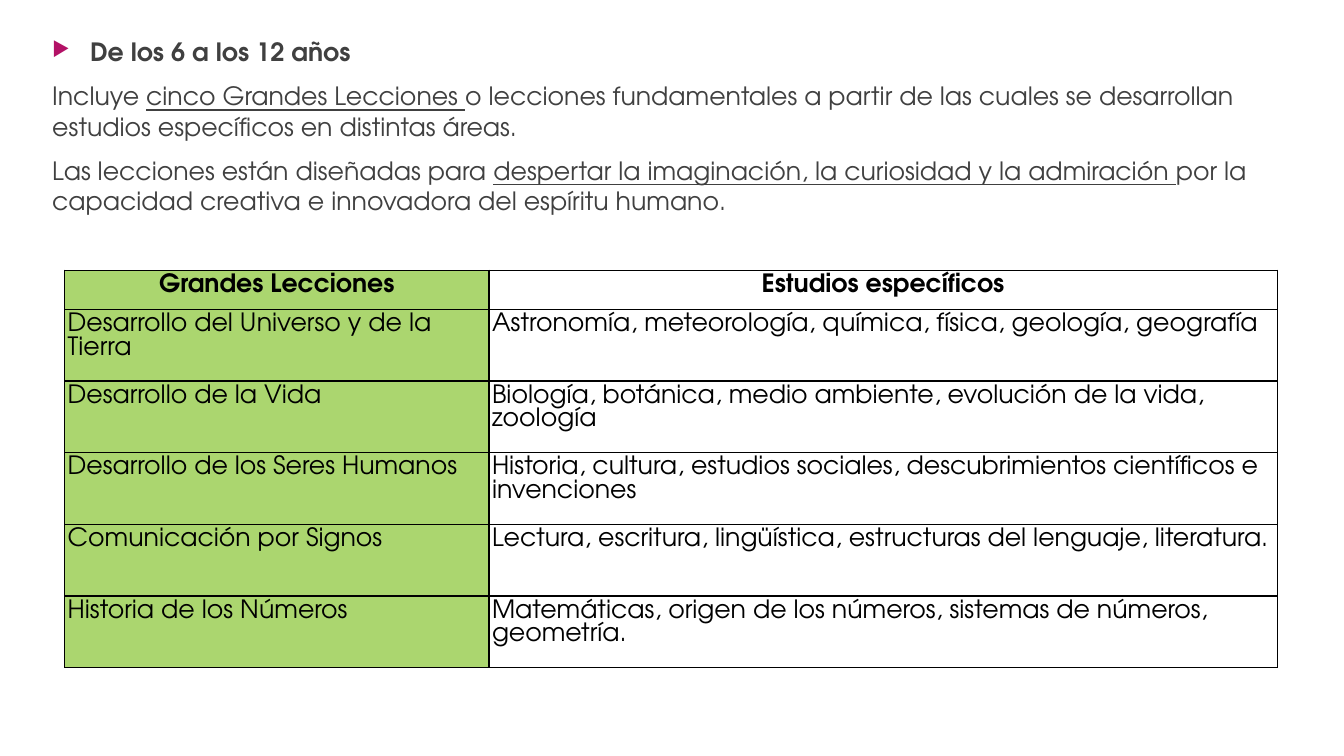
from lxml.etree import SubElement
from pptx import Presentation
from pptx.dml.color import RGBColor
from pptx.enum.text import PP_ALIGN
from pptx.oxml.ns import qn
from pptx.util import Pt

COLORS = {"body": "404040", "ink": "000000", "bullet": "B31166",
          "lesson": "ABD66F", "study": "FFFFFF"}

INTRO = [
    [("De los 6 a los 12 años", {"bold": True})],
    [("Incluye ", {}),
     ("cinco Grandes Lecciones ", {"underline": True}),
     ("o lecciones fundamentales a partir de las cuales se desarrollan "
      "estudios específicos en distintas áreas.", {})],
    [("Las lecciones están diseñadas para ", {}),
     ("despertar la imaginación, la curiosidad y la admiración ", {"underline": True}),
     ("por la capacidad creativa e innovadora del espíritu humano.", {})],
]

LESSONS = [
    ("Grandes Lecciones", "Estudios específicos"),
    ("Desarrollo del Universo y de la Tierra",
     "Astronomía, meteorología, química, física, geología, geografía"),
    ("Desarrollo de la Vida",
     "Biología, botánica, medio ambiente, evolución de la vida, zoología"),
    ("Desarrollo de los Seres Humanos",
     "Historia, cultura, estudios sociales, descubrimientos científicos e invenciones"),
    ("Comunicación por Signos",
     "Lectura, escritura, lingüística, estructuras del lenguaje, literatura."),
    ("Historia de los Números",
     "Matemáticas, origen de los números, sistemas de números, geometría."),
]


class LessonPage:
    """Hold the text style and the current slide, and add elements to it."""

    def __init__(self, page):
        self.page = page
        self.font = {"name": "TeX Gyre Adventor", "size": Pt(18)}

    def span(self, para, text, color, **values):
        run = para.add_run()
        run.text = text
        for name, value in {**self.font, **values}.items():
            setattr(run.font, name, value)
        run.font.color.rgb = RGBColor.from_string(COLORS[color])

    def bullet(self, para, indent):
        properties = para._p.get_or_add_pPr()
        properties.set("marL", str(Pt(indent)))
        properties.set("indent", str(-Pt(indent)))
        color = SubElement(properties, qn("a:buClr"))
        SubElement(color, qn("a:srgbClr"), val=COLORS["bullet"])
        SubElement(properties, qn("a:buSzPct"), val="80000")
        SubElement(properties, qn("a:buChar"), char="▶")

    def text(self, left, top, width, height, paragraphs):
        box = self.page.shapes.add_textbox(Pt(left), Pt(top), Pt(width), Pt(height))
        frame = box.text_frame
        frame.word_wrap = True
        for index, spans in enumerate(paragraphs):
            para = frame.add_paragraph() if index else frame.paragraphs[0]
            if index:
                para.space_before = Pt(10)
            else:
                self.bullet(para, 27)
            for text, values in spans:
                self.span(para, text, "body", **values)

    def borders(self, cell):
        properties = cell._tc.get_or_add_tcPr()
        for side in ("lnL", "lnR", "lnT", "lnB"):
            line = SubElement(properties, qn(f"a:{side}"), w=str(Pt(1)))
            fill = SubElement(line, qn("a:solidFill"))
            SubElement(fill, qn("a:srgbClr"), val=COLORS["ink"])

    def cell(self, cell, text, fill, header):
        for side in ("left", "right", "top", "bottom"):
            setattr(cell, f"margin_{side}", Pt(2.2))
        self.borders(cell)
        cell.fill.solid()
        cell.fill.fore_color.rgb = RGBColor.from_string(COLORS[fill])
        para = cell.text_frame.paragraphs[0]
        para.line_spacing = Pt(17)
        para.alignment = PP_ALIGN.CENTER if header else PP_ALIGN.LEFT
        self.span(para, text, "ink", bold=header)

    def table(self, left, top, widths, header_height, row_height, rows):
        heights = [header_height] + [row_height] * (len(rows) - 1)
        table = self.page.shapes.add_table(
            len(rows), len(widths), Pt(left), Pt(top),
            Pt(sum(widths)), Pt(sum(heights))).table
        for column, width in zip(table.columns, widths):
            column.width = Pt(width)
        for index, (row, height, texts) in enumerate(zip(table.rows, heights, rows)):
            row.height = Pt(height)
            for cell, text, fill in zip(row.cells, texts, ("lesson", "study")):
                self.cell(cell, text, fill, index == 0)


def main():
    deck = Presentation()
    deck.slide_width, deck.slide_height = Pt(960), Pt(540)
    page = LessonPage(deck.slides.add_slide(deck.slide_layouts[6]))
    page.text(30.2, 22.5, 913.7, 161.3, INTRO)
    page.table(46.2, 193, (303.1, 563), 28, 51.2, LESSONS)
    deck.save("out.pptx")


if __name__ == "__main__":
    main()
